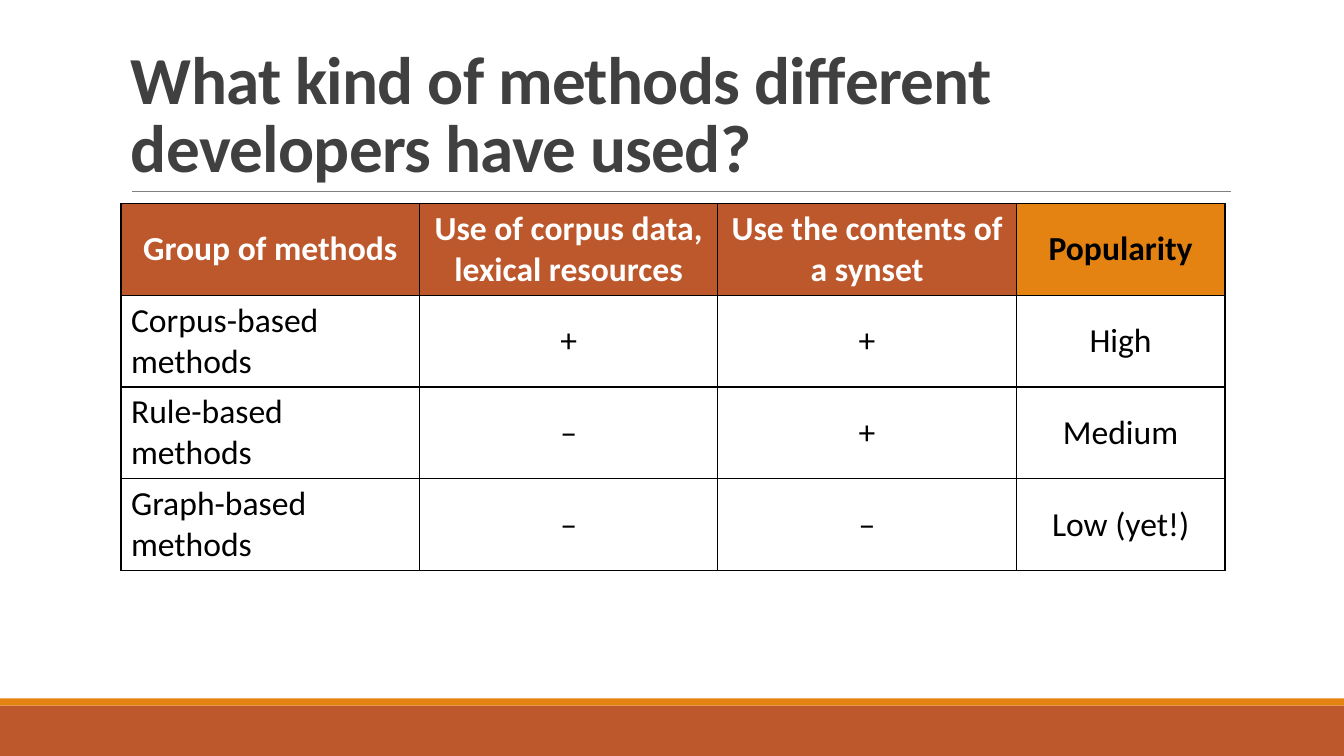
from dataclasses import dataclass

from lxml import etree
from pptx import Presentation
from pptx.dml.color import RGBColor
from pptx.enum.shapes import MSO_CONNECTOR, MSO_SHAPE
from pptx.enum.text import MSO_ANCHOR, PP_ALIGN
from pptx.oxml.ns import qn
from pptx.util import Inches, Pt

RECTANGLE = MSO_SHAPE.RECTANGLE
STRAIGHT = MSO_CONNECTOR.STRAIGHT
MIDDLE, BOTTOM = MSO_ANCHOR.MIDDLE, MSO_ANCHOR.BOTTOM
LEFT, CENTER = PP_ALIGN.LEFT, PP_ALIGN.CENTER


@dataclass(frozen=True)
class Theme:
    font: str = "Calibri"
    rust: str = "BD582C"
    orange: str = "E48312"
    heading: str = "404040"
    rule: str = "808080"
    black: str = "000000"
    white: str = "FFFFFF"
    title_size: int = 48
    table_size: int = 24


theme = Theme()


def style_paragraph(paragraph, size, color, bold, alignment):
    paragraph.alignment = alignment
    paragraph.font.name = theme.font
    paragraph.font.size = Pt(size)
    paragraph.font.bold = bold
    paragraph.font.color.rgb = RGBColor.from_string(color)


def add_borders(cell):
    properties = cell._tc.get_or_add_tcPr()
    for position, side in enumerate(("a:lnL", "a:lnR", "a:lnT", "a:lnB")):
        border = etree.Element(qn(side), w=str(Pt(1)))
        fill = etree.SubElement(border, qn("a:solidFill"))
        etree.SubElement(fill, qn("a:srgbClr"), val=theme.black)
        properties.insert(position, border)


prs = Presentation()
prs.slide_width, prs.slide_height = Inches(13.33), Inches(7.5)
slide = prs.slides.add_slide(prs.slide_layouts[6])

for top, height, color in ((7, 0.5, theme.rust), (6.93, 0.07, theme.orange)):
    band = slide.shapes.add_shape(
        RECTANGLE, 0, Inches(top), prs.slide_width, Inches(height)
    )
    band.shadow.inherit = False
    band.fill.solid()
    band.fill.fore_color.rgb = RGBColor.from_string(color)
    band.line.fill.background()

title_rule = slide.shapes.add_connector(
    STRAIGHT, Inches(1.31), Inches(1.9), Inches(12.21), Inches(1.9)
)
title_rule.line.color.rgb = RGBColor.from_string(theme.rule)
title_rule.line.width = Pt(0.5)
etree.SubElement(title_rule._element.spPr, qn("a:effectLst"))

title = slide.shapes.add_textbox(
    Inches(1.2), Inches(0.31), Inches(11), Inches(1.59)
).text_frame
title.word_wrap = True
title.vertical_anchor = BOTTOM
title.text = "What kind of methods different developers have used?"
question = title.paragraphs[0]
question.line_spacing = 0.85
style_paragraph(question, theme.title_size, theme.heading, True, LEFT)
question.runs[0].font._element.set("spc", "-50")

methods = [
    ["Group of methods", "Use of corpus data, lexical resources",
     "Use the contents of a synset", "Popularity"],
    ["Corpus-based methods", "+", "+", "High"],
    ["Rule-based methods", "–", "+", "Medium"],
    ["Graph-based methods", "–", "–", "Low (yet!)"],
]
column_widths = [2.96, 2.96, 2.96, 2.07]
row_height = Inches(0.91)

table = slide.shapes.add_table(
    len(methods), len(column_widths), Inches(1.2), Inches(2.02),
    Inches(sum(column_widths)), row_height * len(methods),
).table
for column, width in zip(table.columns, column_widths):
    column.width = Inches(width)

for row, texts in enumerate(methods):
    for column, text in enumerate(texts):
        is_header = row == 0
        is_popularity = column == len(texts) - 1
        background, ink = theme.white, theme.black
        if is_header:
            background = theme.orange if is_popularity else theme.rust
            ink = theme.black if is_popularity else theme.white
        cell = table.cell(row, column)
        cell.text = text
        cell.vertical_anchor = MIDDLE
        cell.fill.solid()
        cell.fill.fore_color.rgb = RGBColor.from_string(background)
        alignment = CENTER if is_header or column else LEFT
        style_paragraph(
            cell.text_frame.paragraphs[0], theme.table_size, ink, is_header, alignment
        )
        add_borders(cell)

prs.save("out.pptx")
